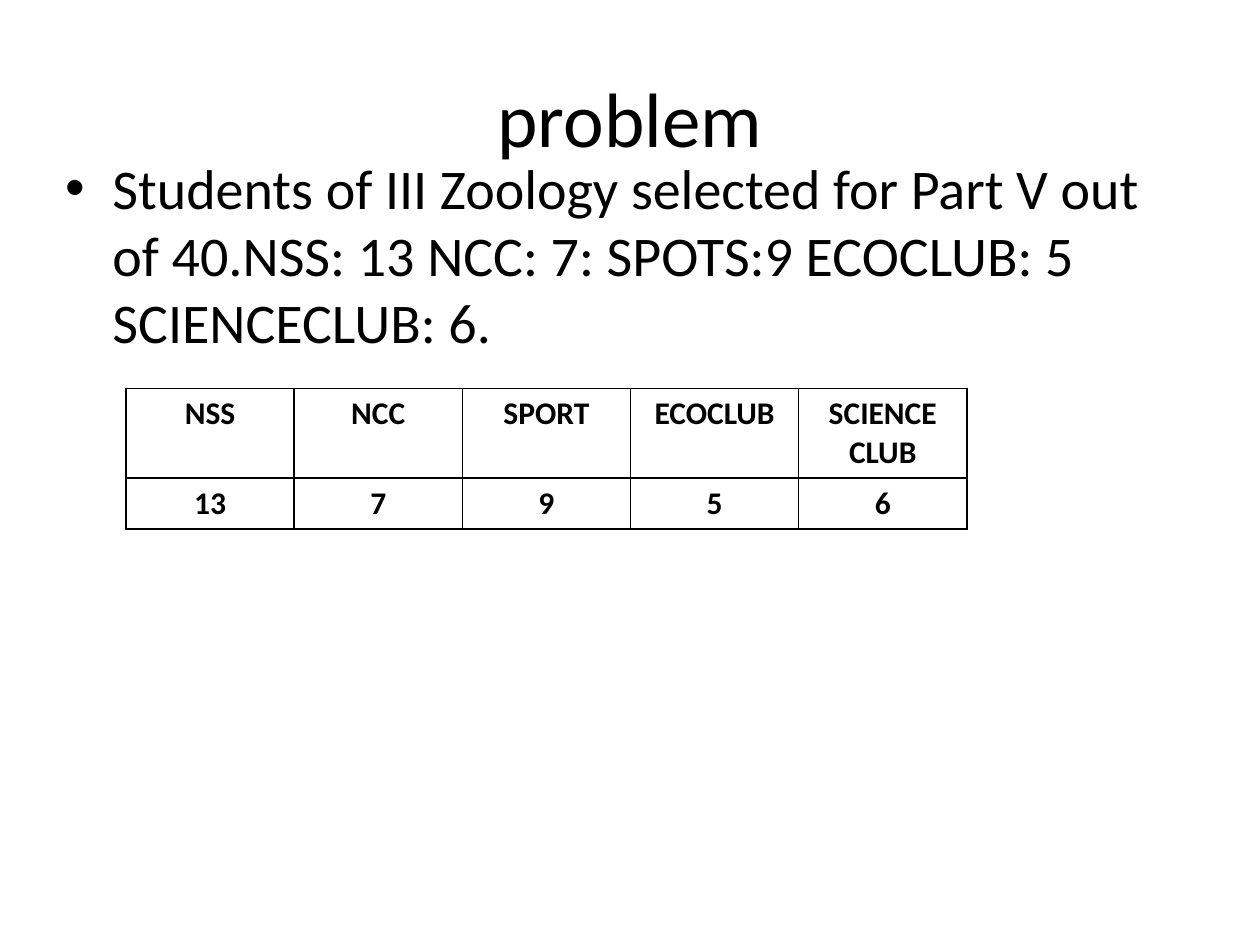
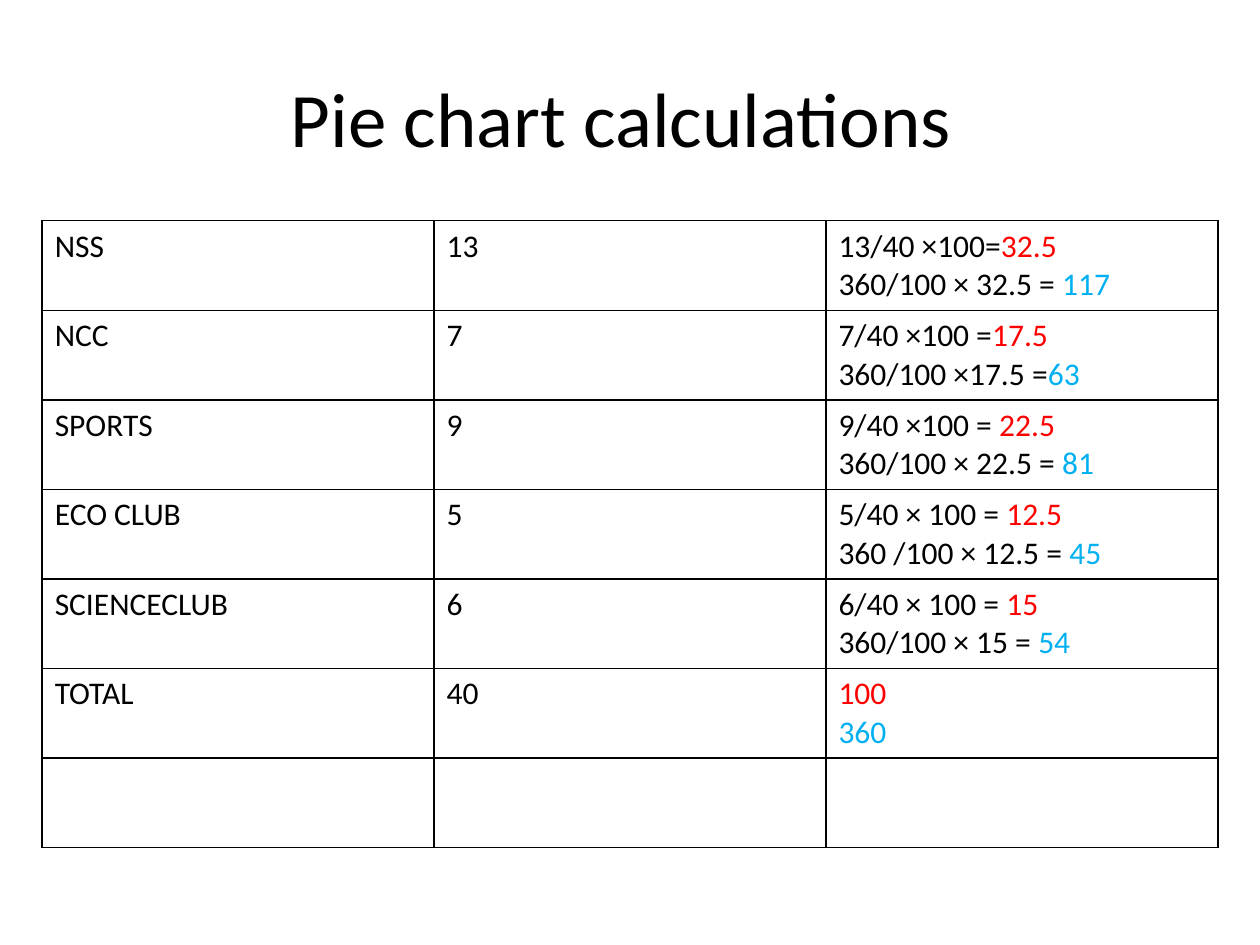
from lxml.etree import SubElement
from pptx import Presentation
from pptx.dml.color import RGBColor
from pptx.enum.text import MSO_ANCHOR, PP_ALIGN
from pptx.oxml.ns import qn
from pptx.util import Cm, Pt

FONT = "Calibri"
BLACK = RGBColor(0x00, 0x00, 0x00)
PERCENT_RED = RGBColor(0xFF, 0x00, 0x00)
DEGREE_BLUE = RGBColor(0x00, 0xB0, 0xF0)

TITLE_AND_CONTENT, TITLE_ONLY = 1, 5

CLUBS = ["NSS", "NCC", "SPORT", "ECOCLUB", "SCIENCE CLUB"]
COUNTS = ["13", "7", "9", "5", "6"]

# Club, count, then working and result for the percentage and for the angle
CALCULATIONS = [
    ("NSS", "13", "13/40 ×100=", "32.5", "360/100 × 32.5 = ", "117"),
    ("NCC", "7", "7/40 ×100 =", "17.5", "360/100 ×17.5 =", "63"),
    ("SPORTS", "9", "9/40 ×100 = ", "22.5", "360/100 × 22.5 = ", "81"),
    ("ECO CLUB", "5", "5/40 × 100 = ", "12.5", "360 /100 × 12.5 = ", "45"),
    ("SCIENCECLUB", "6", "6/40 × 100 = ", "15", "360/100 × 15 = ", "54"),
    ("TOTAL", "40", "", "100", "", "360"),
]


def place(item, left, top, width, height):
    item.left, item.top = Cm(left), Cm(top)
    item.width, item.height = Cm(width), Cm(height)


def add_run(paragraph, text, size, color=BLACK, bold=False):
    run = paragraph.add_run()
    run.text = text
    run.font.name = FONT
    run.font.size = Pt(size)
    run.font.bold = bold
    run.font.color.rgb = color


def add_titled_slide(prs, layout, title_text):
    slide = prs.slides.add_slide(prs.slide_layouts[layout])
    title = slide.shapes.title
    place(title, 1.27, 0.76, 22.86, 3.18)
    title.text_frame.vertical_anchor = MSO_ANCHOR.MIDDLE
    paragraph = title.text_frame.paragraphs[0]
    paragraph.alignment = PP_ALIGN.CENTER
    add_run(paragraph, title_text, 44)
    return slide


def fill_body(slide, text):
    body = slide.placeholders[1]
    place(body, 1.06, 2.96, 22.86, 14.29)
    paragraph = body.text_frame.paragraphs[0]
    paragraph.space_before = Pt(0)
    add_run(paragraph, text, 32)


def draw_borders(cell):
    properties = cell._tc.get_or_add_tcPr()
    for side in ("a:lnL", "a:lnR", "a:lnT", "a:lnB"):
        line = SubElement(properties, qn(side), w=str(Pt(1)))
        fill = SubElement(line, qn("a:solidFill"))
        SubElement(fill, qn("a:srgbClr"), val=str(BLACK))


def add_grid(slide, left, top, column_width, column_count, row_heights):
    """Add an unfilled table with black borders and equal columns."""
    frame = slide.shapes.add_table(
        len(row_heights), column_count, Cm(left), Cm(top),
        Cm(column_width * column_count), Cm(sum(row_heights)))
    table = frame.table
    table.first_row = table.horz_banding = False
    for column in table.columns:
        column.width = Cm(column_width)
    for row, height in zip(table.rows, row_heights):
        row.height = Cm(height)
    for cell in table.iter_cells():
        draw_borders(cell)
        cell.fill.background()
    return table


def write_cell(cell, lines, bold=False, alignment=PP_ALIGN.LEFT):
    """Write one paragraph per line; a line is a list of (text, color)."""
    frame = cell.text_frame
    for index, line in enumerate(lines):
        paragraph = frame.add_paragraph() if index else frame.paragraphs[0]
        paragraph.alignment = alignment
        for text, color in line:
            if text:
                add_run(paragraph, text, 18, color, bold)


def add_problem_slide(prs):
    slide = add_titled_slide(prs, TITLE_AND_CONTENT, "problem")
    fill_body(slide, "Students of III Zoology selected for Part V out of 40."
                     "NSS: 13 NCC: 7: SPOTS:9 ECOCLUB: 5 SCIENCECLUB: 6.")
    table = add_grid(slide, 2.54, 7.83, 3.39, len(CLUBS), [1.8, 1.03])
    for row, texts in enumerate((CLUBS, COUNTS)):
        for column, text in enumerate(texts):
            write_cell(table.cell(row, column), [[(text, BLACK)]],
                       bold=True, alignment=PP_ALIGN.CENTER)


def add_calculation_slide(prs):
    slide = add_titled_slide(prs, TITLE_ONLY, "Pie chart calculations ")
    blank_rows = 1
    row_heights = [1.8] * (len(CALCULATIONS) + blank_rows)
    table = add_grid(slide, 0.85, 4.45, 7.9, 3, row_heights)
    for row, (club, count, percent_work, percent,
              degree_work, degrees) in enumerate(CALCULATIONS):
        write_cell(table.cell(row, 0), [[(club, BLACK)]])
        write_cell(table.cell(row, 1), [[(count, BLACK)]])
        write_cell(table.cell(row, 2), [
            [(percent_work, BLACK), (percent, PERCENT_RED)],
            [(degree_work, BLACK), (degrees, DEGREE_BLUE)],
        ])


def main():
    prs = Presentation()
    prs.slide_width, prs.slide_height = Cm(25.4), Cm(19.05)
    add_problem_slide(prs)
    add_calculation_slide(prs)
    prs.save("out.pptx")


if __name__ == "__main__":
    main()
